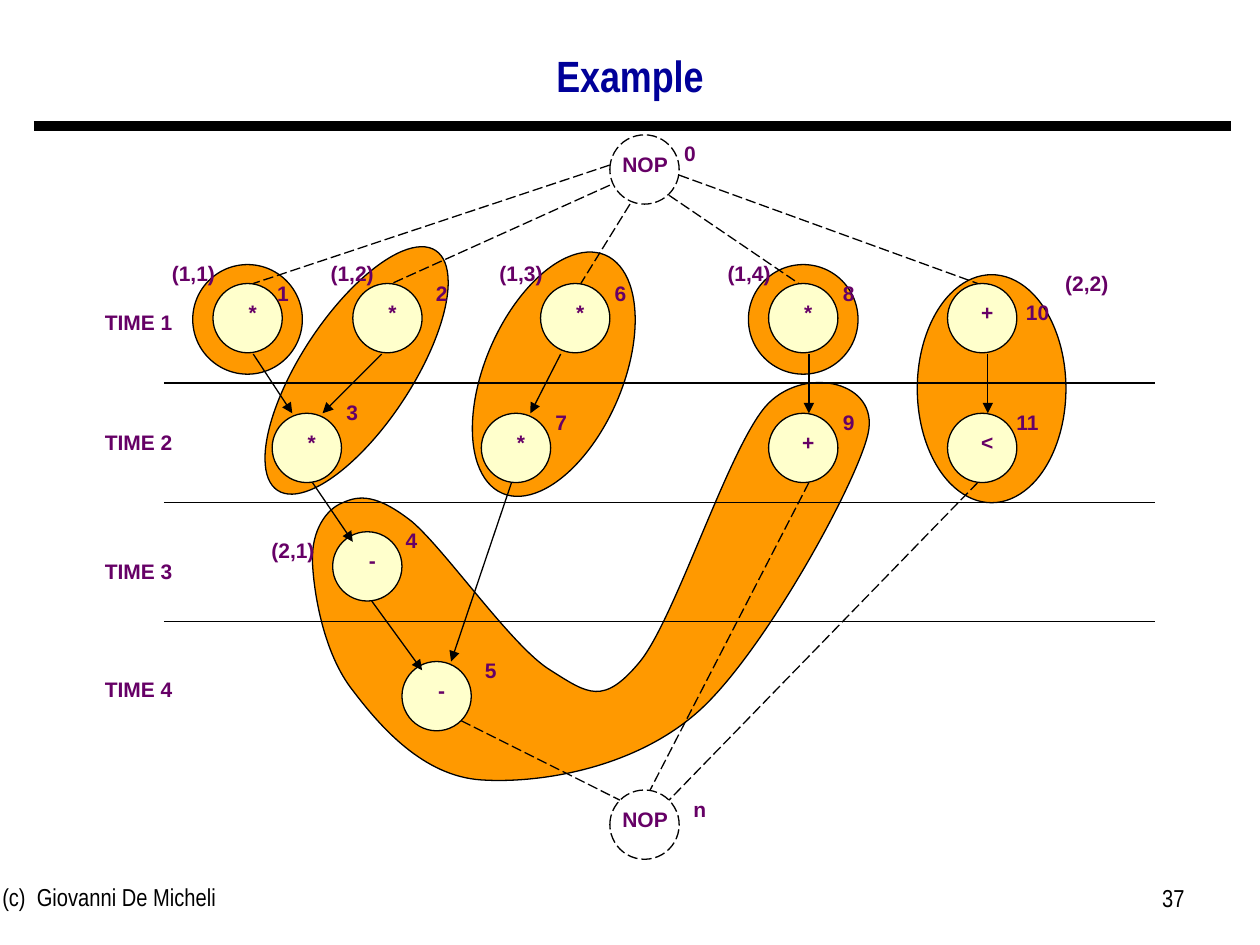
import lxml.etree
import pptx
import pptx.dml.color
import pptx.enum.dml
import pptx.enum.shapes
import pptx.enum.text
import pptx.oxml.ns
import pptx.util

Inches = pptx.util.Inches
Pt = pptx.util.Pt
qn = pptx.oxml.ns.qn
OVAL = pptx.enum.shapes.MSO_SHAPE.OVAL
STRAIGHT = pptx.enum.shapes.MSO_CONNECTOR.STRAIGHT
LONG_DASH = pptx.enum.dml.MSO_LINE.LONG_DASH
ALIGN = pptx.enum.text.PP_ALIGN
ANCHOR = pptx.enum.text.MSO_ANCHOR

COLORS = {"ink": "000000", "title": "000099", "label": "660066",
          "binding": "FF9900", "operation": "FFFFCC"}
NODE_SIZE = 0.55
LABEL_HEIGHT = 0.3
TAG_WIDTH = 0.79

# Everything in the graph is measured from the graph's top left corner.
ROWS = [1.25, 2.28, 3.22, 4.25]
TIME_TOPS = [1.41, 2.36, 3.38, 4.32]
STEP_LINES = [2.04, 2.99, 3.93]

# name, symbol, left, top, offset of the name from the node
OPERATIONS = [
    ("1", "*", 1.19, ROWS[0], (0.16, -0.07)),
    ("2", "*", 2.3, ROWS[0], (0.31, -0.07)),
    ("6", "*", 3.79, ROWS[0], (0.24, -0.07)),
    ("8", "*", 5.6, ROWS[0], (0.24, -0.07)),
    ("10", "+", 7.02, ROWS[0], (0.32, 0.08)),
    ("3", "*", 1.66, ROWS[1], (0.24, -0.16)),
    ("7", "*", 3.32, ROWS[1], (0.24, -0.08)),
    ("9", "+", 5.6, ROWS[1], (0.24, -0.08)),
    ("11", "<", 7.02, ROWS[1], (0.24, -0.08)),
    ("4", "-", 2.14, ROWS[2], (0.23, -0.08)),
    ("5", "-", 2.69, ROWS[3], (0.31, -0.08)),
]
NOPS = [("0", "NOP", 4.34, 0.07, (0.24, 0)), ("n", "NOP", 4.34, 5.27, (0.32, 0))]

DEPENDENCIES = [
    (1.51, 1.81, 1.82, 2.28), (2.53, 1.81, 2.06, 2.28), (3.95, 1.81, 3.71, 2.28),
    (5.92, 1.81, 5.92, 2.28), (7.34, 1.81, 7.34, 2.28), (1.98, 2.83, 2.3, 3.3),
    (2.45, 3.77, 2.85, 4.32), (3.56, 2.83, 3.08, 4.25),
]
NOP_LINKS = [
    (4.34, 0.31, 1.51, 1.25), (4.34, 0.47, 2.61, 1.25), (4.5, 0.62, 4.11, 1.25),
    (4.81, 0.55, 5.84, 1.25), (4.89, 0.39, 7.26, 1.25), (3.16, 4.72, 4.42, 5.35),
    (5.92, 2.83, 4.66, 5.27), (7.26, 2.83, 4.81, 5.35),
]

# left, top, width, height, rotation
BINDING_OVALS = [
    (3.35, 0.94, 1.09, 2.06, 23.4), (6.78, 1.18, 1.18, 1.81, 0),
    (1.89, 0.8, 0.88, 2.28, 33.4), (5.44, 1.1, 0.87, 0.87, 0),
    (1.03, 1.1, 0.87, 0.87, 0),
]
BINDING_TAGS = [("(1,1)", 0.64, 1.02), ("(1,2)", 1.9, 1.02), ("(1,3)", 3.24, 1.02),
                ("(1,4)", 5.05, 1.02), ("(2,2)", 7.73, 1.1), ("(2,1)", 1.43, 3.22)]

# Binding around 4, 5 and 9: a start point, then three points per Bezier segment
ALU_OUTLINE = [
    (1.98, 3.46),
    (1.97, 3.21), (2.09, 3.04), (2.22, 2.99), (2.35, 2.93), (2.49, 2.92), (2.77, 3.14),
    (3.04, 3.37), (3.57, 4.14), (3.87, 4.32), (4.17, 4.51), (4.29, 4.6), (4.58, 4.25),
    (4.87, 3.89), (5.3, 2.5), (5.6, 2.2), (5.9, 1.9), (6.48, 2.03), (6.39, 2.44),
    (6.3, 2.84), (5.56, 4.18), (5.05, 4.64), (4.54, 5.1), (3.78, 5.22), (3.32, 5.19),
    (2.86, 5.16), (2.52, 4.77), (2.3, 4.48), (2.07, 4.19), (1.99, 3.71), (1.98, 3.46),
]


def rgb(name):
    return pptx.dml.color.RGBColor.from_string(COLORS[name])


def add_text(shapes, text, left, top, width, height=LABEL_HEIGHT, *, size=12, font="Arial",
             color="label", bold=True, align=ALIGN.CENTER, anchor=ANCHOR.TOP, spacing=None):
    box = shapes.add_textbox(Inches(left), Inches(top), Inches(width), Inches(height))
    frame = box.text_frame
    frame.word_wrap = True
    frame.vertical_anchor = anchor
    paragraph = frame.paragraphs[0]
    paragraph.alignment = align
    paragraph.line_spacing = spacing
    run = paragraph.add_run()
    run.text = text
    run.font.name, run.font.size, run.font.bold = font, Pt(size), bold
    run.font.color.rgb = rgb(color)


def style_outline(shape, fill=None, dash=None):
    shape.shadow.inherit = False
    if fill:
        shape.fill.solid()
        shape.fill.fore_color.rgb = rgb(fill)
    else:
        shape.fill.background()
    shape.line.color.rgb = rgb("ink")
    shape.line.width = Pt(0.75)
    shape.line.dash_style = dash


def add_line(shapes, x1, y1, x2, y2, weight=0.75, dash=None, arrow=False):
    line = shapes.add_connector(STRAIGHT, Inches(x1), Inches(y1), Inches(x2), Inches(y2))
    line.line.color.rgb = rgb("ink")
    line.line.width = Pt(weight)
    line.line.dash_style = dash
    properties = line.element.find(qn("p:spPr"))
    if arrow:
        lxml.etree.SubElement(properties.find(qn("a:ln")), qn("a:tailEnd"), type="triangle")
    lxml.etree.SubElement(properties, qn("a:effectLst"))


def add_curved_outline(shapes, points):
    """Closed Bezier outline: each three line segments become one curve."""
    start, *rest = [(Inches(x), Inches(y)) for x, y in points]
    builder = shapes.build_freeform(*start)
    builder.add_line_segments(rest, close=True)
    outline = builder.convert_to_shape()
    segments = list(outline.element.iter(qn("a:lnTo")))
    for first in range(0, len(rest), 3):
        curve = lxml.etree.Element(qn("a:cubicBezTo"))
        segments[first].addprevious(curve)
        for segment in segments[first:first + 3]:
            curve.append(segment[0])
            segment.getparent().remove(segment)
    return outline


def add_bindings(slide, left, top):
    shapes = slide.shapes.add_group_shape().shapes
    alu = add_curved_outline(shapes, [(left + x, top + y) for x, y in ALU_OUTLINE])
    style_outline(alu, "binding")
    for x, y, width, height, rotation in BINDING_OVALS:
        oval = shapes.add_shape(OVAL, Inches(left + x), Inches(top + y),
                                Inches(width), Inches(height))
        oval.rotation = rotation
        style_outline(oval, "binding")


def add_node(slide, symbol, left, top, symbol_left, symbol_width, **outline):
    shapes = slide.shapes.add_group_shape().shapes
    circle = shapes.add_shape(OVAL, Inches(left), Inches(top),
                              Inches(NODE_SIZE), Inches(NODE_SIZE))
    style_outline(circle, **outline)
    add_text(shapes, symbol, left + symbol_left, top + 0.08, symbol_width)


def add_graph(slide, left, top):
    """Scheduled sequencing graph with its resource bindings."""
    shapes = slide.shapes
    for _, symbol, x, y, _ in OPERATIONS:
        add_node(slide, symbol, left + x, top + y, 0, 0.63, fill="operation")
    for _, symbol, x, y, _ in NOPS:
        add_node(slide, symbol, left + x, top + y, -0.23, 1.02, dash=LONG_DASH)

    for y in STEP_LINES:
        add_line(shapes, left + 0.8, top + y, left + 8.67, top + y)
    for edges, look in ((NOP_LINKS, {"dash": LONG_DASH}), (DEPENDENCIES, {"arrow": True})):
        for x1, y1, x2, y2 in edges:
            add_line(shapes, left + x1, top + y1, left + x2, top + y2, **look)

    for name, _, x, y, (dx, dy) in OPERATIONS + NOPS:
        add_text(shapes, name, left + x + dx, top + y + dy, TAG_WIDTH)
    for step, y in enumerate(TIME_TOPS, start=1):
        add_text(shapes, f"TIME {step}", left + 0.01, top + y, 1.18)
    for tag, x, y in BINDING_TAGS:
        add_text(shapes, tag, left + x, top + y, TAG_WIDTH)


def add_header(slide, left, top, width, height):
    add_line(slide.shapes, left - 0.48, top + 1, left + width + 0.52, top + 1, weight=6)
    add_text(slide.shapes, "Example", left, top, width, height, size=25, font="Arial Narrow",
             color="title", anchor=ANCHOR.MIDDLE, spacing=0.9)


def add_footer(slide, left, top, width, height):
    look = {"size": 14, "font": "Arial Narrow", "color": "ink", "bold": False}
    add_text(slide.shapes, "(c)  Giovanni De Micheli", left, top, 3.17, height,
             align=ALIGN.LEFT, **look)
    add_text(slide.shapes, "37", left + width - 2.33, top + 0.01, 2.33, height,
             align=ALIGN.RIGHT, **look)


def main():
    deck = pptx.Presentation()
    deck.slide_width, deck.slide_height = Inches(10), Inches(7.5)
    slide = deck.slides.add_slide(deck.slide_layouts[6])
    add_header(slide, 0.75, 0, 8.5, 1.25)
    add_bindings(slide, 0.5, 1)
    add_graph(slide, 0.5, 1)
    add_footer(slide, -0.08, 6.95, 9.58, 0.52)
    deck.save("out.pptx")


if __name__ == "__main__":
    main()
